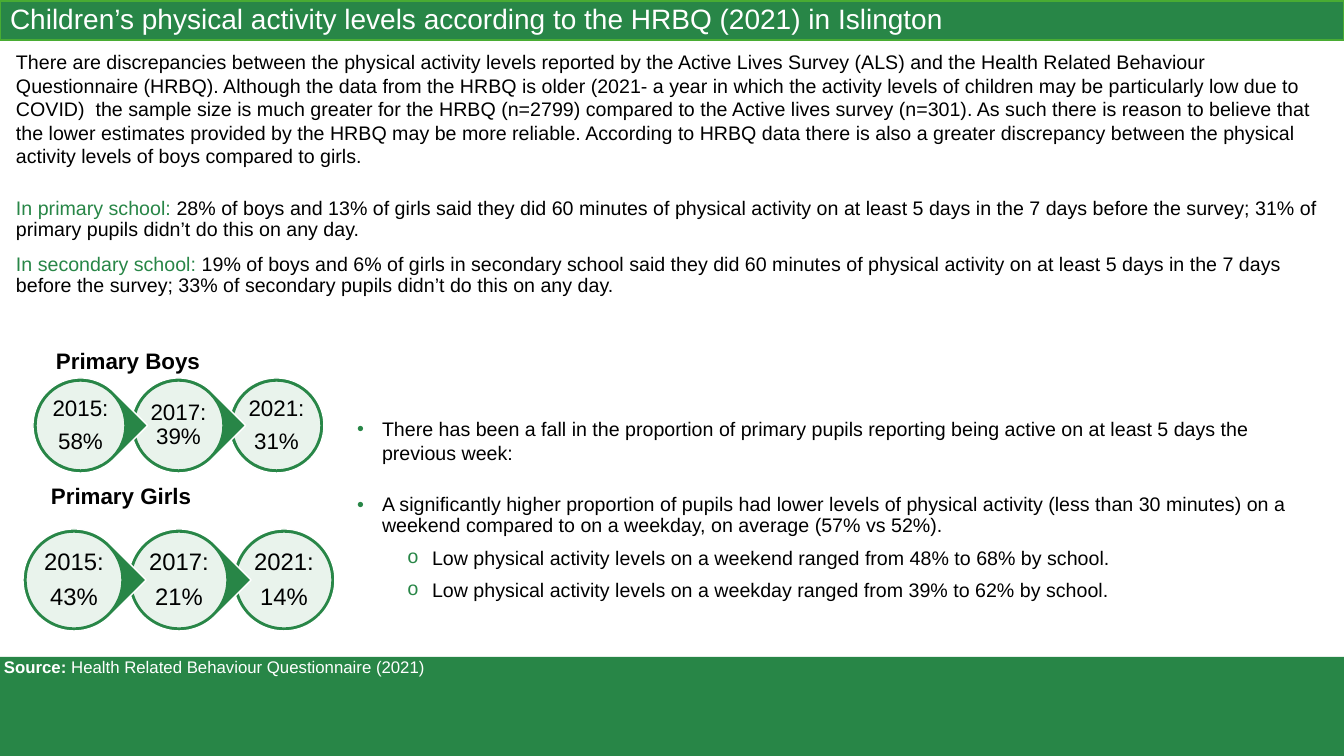
from lxml import etree
from pptx import Presentation
from pptx import util as u
from pptx.dml.color import RGBColor
from pptx.enum import shapes, text
from pptx.oxml.ns import qn

GREEN = RGBColor(0x28, 0x86, 0x47)
EDGE = RGBColor(0x49, 0xAC, 0x33)
WHITE = RGBColor(0xFF, 0xFF, 0xFF)
BLACK = RGBColor(0, 0, 0)
FONT = "Arial"

INTRO = (
    "There are discrepancies between the physical activity levels reported by the Active Lives Survey (ALS) "
    "and the Health Related Behaviour Questionnaire (HRBQ). Although the data from the HRBQ is older "
    "(2021- a year in which the activity levels of children may be particularly low due to COVID)  the sample "
    "size is much greater for the HRBQ (n=2799) compared to the Active lives survey (n=301). As such there is "
    "reason to believe that the lower estimates provided by the HRBQ may be more reliable. According to HRBQ "
    "data there is also a greater discrepancy between the physical activity levels of boys compared to girls."
)
PRIMARY = (
    " 28% of boys and 13% of girls said they did 60 minutes of physical activity on at least 5 days in the "
    "7 days before the survey; 31% of primary pupils didn’t do this on any day."
)
SECONDARY = (
    "19% of boys and 6% of girls in secondary school said they did 60 minutes of physical activity on at least "
    "5 days in the 7 days before the survey; 33% of secondary pupils didn’t do this on any day."
)
FALL = (
    "There has been a fall in the proportion of primary pupils reporting being active on at least 5 days "
    "the previous week:"
)
WEEKEND = (
    "A significantly higher proportion of pupils had lower levels of physical activity (less than 30 minutes) "
    "on a weekend compared to on a weekday, on average (57% vs 52%)."
)
WEEKEND_RANGE = "Low physical activity levels on a weekend ranged from 48% to 68% by school."
WEEKDAY_RANGE = "Low physical activity levels on a weekday ranged from 39% to 62% by school."


def px(length):
    return u.Emu(round(length * 914400 / 100.8))


class Slide:
    def __init__(self, deck):
        self.page = deck.slides.add_slide(deck.slide_layouts[6])

    def shape(self, kind, place, fill, line=None, width=1, opacity=None, parent=None):
        item = (parent or self.page).shapes.add_shape(kind, *map(px, place))
        item.shadow.inherit = False
        item.fill.solid()
        item.fill.fore_color.rgb = fill
        if opacity:
            colour = item.fill._xPr.find(".//" + qn("a:srgbClr"))
            etree.SubElement(colour, qn("a:alpha"), val=str(opacity * 1000))
        if line is None:
            item.line.fill.background()
        else:
            item.line.color.rgb = line
            item.line.width = u.Pt(width)
        return item

    def box(self, place, inset=(0, 0), anchor=text.MSO_ANCHOR.TOP, parent=None):
        """Add a text box and return its frame; inset is (sides, top and bottom)."""
        frame = (parent or self.page).shapes.add_textbox(*map(px, place)).text_frame
        frame.word_wrap = True
        frame.vertical_anchor = anchor
        frame.margin_left = frame.margin_right = px(inset[0])
        frame.margin_top = frame.margin_bottom = px(inset[1])
        return frame

    def para(self, frame, spans, size, spacing=1.0, before=0, after=0, align=None, bullet=None, level=0):
        """Write one paragraph from (words, colour, bold) spans, reusing the empty first one."""
        first = frame.paragraphs[0]
        para = frame.add_paragraph() if first.runs else first
        para.level = level
        para.line_spacing = spacing
        para.space_before = u.Pt(before)
        para.space_after = u.Pt(after)
        para.alignment = align
        if bullet:
            self.bullet(para, bullet, 25 + 50 * level)
        for words, colour, bold in spans:
            span = para.add_run()
            span.text = words
            span.font.name = FONT
            span.font.size = u.Pt(size)
            span.font.bold = bold
            span.font.color.rgb = colour

    def bullet(self, para, mark, indent):
        props = para._p.get_or_add_pPr()
        props.set("marL", str(px(indent)))
        props.set("indent", str(px(-25)))
        colour = etree.SubElement(props, qn("a:buClr"))
        etree.SubElement(colour, qn("a:srgbClr"), val=str(GREEN))
        etree.SubElement(props, qn("a:buFont"), typeface="Courier New" if mark == "o" else FONT)
        etree.SubElement(props, qn("a:buChar"), char=mark)

    def label(self, place, words):
        self.para(self.box(place), [(words, BLACK, True)], 16)

    def chain(self, left, top, size, pitch, font_size, years):
        """Draw circles that point rightwards, last first so that each tip overlaps the next."""
        group = self.page.shapes.add_group_shape()
        kinds = shapes.MSO_SHAPE
        inner = size * 2 // 3
        gap = (size - inner) // 2
        for index in reversed(range(len(years))):
            x = left + index * pitch
            is_last = index == len(years) - 1
            back = self.shape(kinds.OVAL if is_last else kinds.TEAR, (x, top, size, size),
                              GREEN, WHITE, parent=group)
            back.rotation = 0 if is_last else 45
            self.shape(kinds.OVAL, (x + 3, top + 3, size - 6, size - 6),
                       WHITE, GREEN, opacity=90, parent=group)
            frame = self.box((x + gap, top + gap, inner, inner), (2, 2), text.MSO_ANCHOR.MIDDLE, group)
            for words in years[index]:
                self.para(frame, [(words, BLACK, False)], font_size, 0.9,
                          after=round(font_size * 0.4, 1), align=text.PP_ALIGN.CENTER)


def main():
    deck = Presentation()
    deck.slide_width, deck.slide_height = px(1344), px(756)
    slide = Slide(deck)
    rectangle = shapes.MSO_SHAPE.RECTANGLE

    slide.shape(rectangle, (0, 657, 1344, 99), GREEN)
    slide.shape(rectangle, (0, 1, 1344, 39), GREEN, EDGE, 1.5)
    title = slide.box((10, 1, 1334, 39), anchor=text.MSO_ANCHOR.MIDDLE)
    slide.para(title, [("Children’s physical activity levels according to the HRBQ (2021) in Islington",
                        WHITE, False)], 20, 0.9)

    body = slide.box((16, 50, 1316, 270))
    slide.para(body, [(INTRO, BLACK, False)], 14, after=12)
    for heading, words in (("In primary school:", PRIMARY), ("In secondary school: ", SECONDARY)):
        slide.para(body, [(heading, GREEN, False), (words, BLACK, False)], 14, 0.9, before=10)

    findings = slide.box((347, 412, 974, 240), (10, 5))
    slide.para(findings, [(FALL, BLACK, False)], 14, after=12, bullet="•")
    slide.para(findings, [(WEEKEND, BLACK, False)], 14, 0.9, before=10, bullet="•")
    for words in (WEEKEND_RANGE, WEEKDAY_RANGE):
        slide.para(findings, [(words, BLACK, False)], 14, 0.9, before=8, bullet="o", level=1)

    slide.label((56, 347, 279, 30), "Primary Boys")
    slide.chain(33, 378, 95, 98, 16, [("2015:", "58%"), ("2017: 39%",), ("2021:", "31%")])
    slide.label((51, 482, 255, 30), "Primary Girls")
    slide.chain(23, 529, 102, 105, 17, [("2015:", "43%"), ("2017:", "21%"), ("2021:", "14%")])

    source = slide.box((4, 657, 639, 20))
    slide.para(source, [("Source: ", WHITE, True),
                        ("Health Related Behaviour Questionnaire (2021)", WHITE, False)], 12)
    deck.save("out.pptx")


if __name__ == "__main__":
    main()
